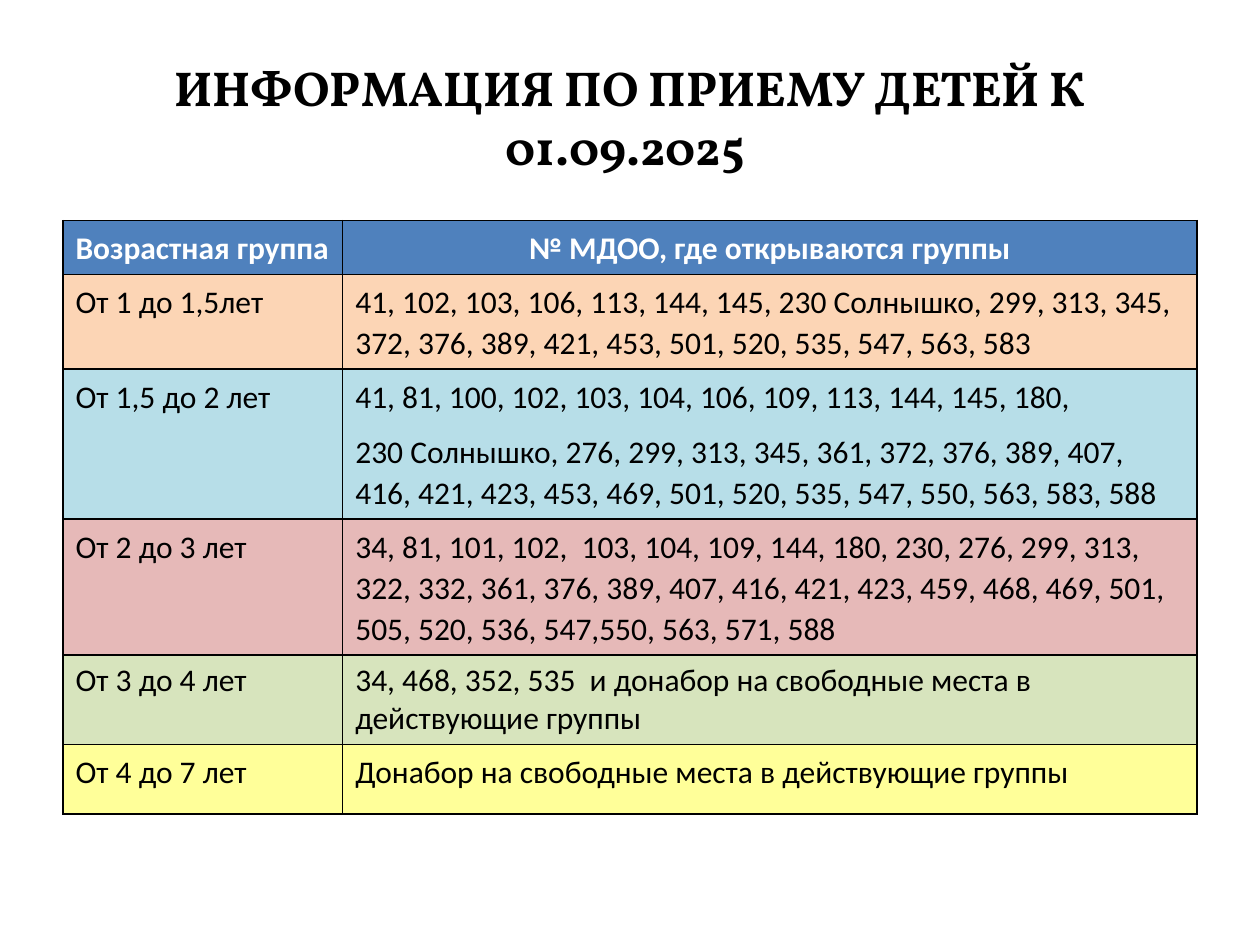
from dataclasses import dataclass

from lxml import etree
from pptx import Presentation
from pptx.dml.color import RGBColor
from pptx.enum.text import MSO_ANCHOR, PP_ALIGN
from pptx.oxml.ns import qn
from pptx.util import Inches, Pt

LEFT, CENTER = PP_ALIGN.LEFT, PP_ALIGN.CENTER
MIDDLE = MSO_ANCHOR.MIDDLE
SLIDE_WIDTH, SLIDE_HEIGHT = Inches(10), Inches(7.5)


@dataclass(frozen=True)
class Theme:
    title_font: str = "Vollkorn"
    body_font: str = "Calibri"
    title_size: int = 28
    body_size: int = 18
    text: str = "000000"
    header_text: str = "FFFFFF"
    header_fill: str = "4F81BD"
    border: str = "000000"
    border_width: int = 1


THEME = Theme()

HEADER = ("Возрастная группа", "№ МДОО, где открываются группы")

# Age group, paragraphs, fill, row height in inches, loose line spacing
AGE_GROUPS = [
    ("От 1 до 1,5лет",
     ["41, 102, 103, 106, 113, 144, 145, 230 Солнышко, 299, 313, 345, "
      "372, 376, 389, 421, 453, 501, 520, 535, 547, 563, 583"],
     "FCD5B5", 0.75, True),
    ("От 1,5 до 2 лет",
     ["41, 81, 100, 102, 103, 104, 106, 109, 113, 144, 145, 180,",
      "230 Солнышко, 276, 299, 313, 345, 361, 372, 376, 389, 407,  "
      "416, 421, 423, 453, 469, 501, 520, 535, 547, 550, 563, 583, 588"],
     "B7DEE8", 1.19, True),
    ("От 2 до 3 лет",
     ["34, 81, 101, 102,  103, 104, 109, 144, 180, 230, 276, 299, 313,  "
      "322, 332, 361, 376, 389, 407, 416, 421, 423, 459, 468, 469, 501, "
      "505, 520, 536, 547,550, 563, 571, 588"],
     "E6B9B8", 1.08, True),
    ("От 3 до 4 лет",
     ["34, 468, 352, 535  и донабор на свободные места в действующие группы"],
     "D7E4BD", 0.71, False),
    ("От 4 до 7 лет",
     ["Донабор на свободные места в действующие группы"],
     "FFFF99", 0.55, True),
]
HEADER_HEIGHT = 0.43
AGE_COLUMN_SHARE = 0.2467


def write_text(text_frame, paragraphs, *, font=THEME.body_font, size=THEME.body_size,
               color=THEME.text, bold=False, align=LEFT, loose=False):
    """Fill a text frame with paragraphs in one format."""
    text_frame.word_wrap = True
    for index, text in enumerate(paragraphs):
        paragraph = text_frame.paragraphs[0] if index == 0 else text_frame.add_paragraph()
        paragraph.alignment = align
        if loose:
            paragraph.line_spacing = 1.07
            paragraph.space_after = Pt(8)
        run = paragraph.add_run()
        run.text = text
        run.font.name = font
        run.font.size = Pt(size)
        run.font.bold = bold
        run.font.color.rgb = RGBColor.from_string(color)


def style_cell(cell, fill):
    """Give a cell its fill and a border on all four sides."""
    cell.fill.solid()
    cell.fill.fore_color.rgb = RGBColor.from_string(fill)
    properties = cell._tc.get_or_add_tcPr()
    for position, side in enumerate(("lnL", "lnR", "lnT", "lnB")):
        line = etree.Element(qn(f"a:{side}"), w=str(Pt(THEME.border_width)))
        solid = etree.SubElement(line, qn("a:solidFill"))
        etree.SubElement(solid, qn("a:srgbClr"), val=THEME.border)
        properties.insert(position, line)


def add_title(slide, left, top, width, height):
    text_frame = slide.shapes.add_textbox(left, top, width, height).text_frame
    text_frame.vertical_anchor = MIDDLE
    write_text(text_frame, ["ИНФОРМАЦИЯ ПО ПРИЕМУ ДЕТЕЙ К 01.09.2025 "],
               font=THEME.title_font, size=THEME.title_size, bold=True, align=CENTER)


def add_admission_table(slide, left, top, width, height):
    table = slide.shapes.add_table(len(AGE_GROUPS) + 1, len(HEADER),
                                   left, top, width, height).table
    table.columns[0].width = int(width * AGE_COLUMN_SHARE)
    table.columns[1].width = width - table.columns[0].width

    # Header row
    table.rows[0].height = Inches(HEADER_HEIGHT)
    for column, (text, align) in enumerate(zip(HEADER, (LEFT, CENTER))):
        cell = table.cell(0, column)
        style_cell(cell, THEME.header_fill)
        write_text(cell.text_frame, [text], color=THEME.header_text,
                   bold=True, align=align, loose=True)

    # One row per age group
    for row, (age, numbers, fill, row_height, loose) in enumerate(AGE_GROUPS, start=1):
        table.rows[row].height = Inches(row_height)
        for column, paragraphs in enumerate(([age], numbers)):
            cell = table.cell(row, column)
            style_cell(cell, fill)
            write_text(cell.text_frame, paragraphs, loose=loose)


def main():
    presentation = Presentation()
    presentation.slide_width, presentation.slide_height = SLIDE_WIDTH, SLIDE_HEIGHT
    slide = presentation.slides.add_slide(presentation.slide_layouts[6])

    margin = int(SLIDE_WIDTH * 0.05)
    content_width = SLIDE_WIDTH - 2 * margin
    table_height = Inches(HEADER_HEIGHT + sum(group[3] for group in AGE_GROUPS))
    add_title(slide, margin, int(SLIDE_HEIGHT * 0.04), content_width, Inches(1.25))
    add_admission_table(slide, margin, Inches(1.75), content_width, table_height)

    presentation.save("out.pptx")


if __name__ == "__main__":
    main()
